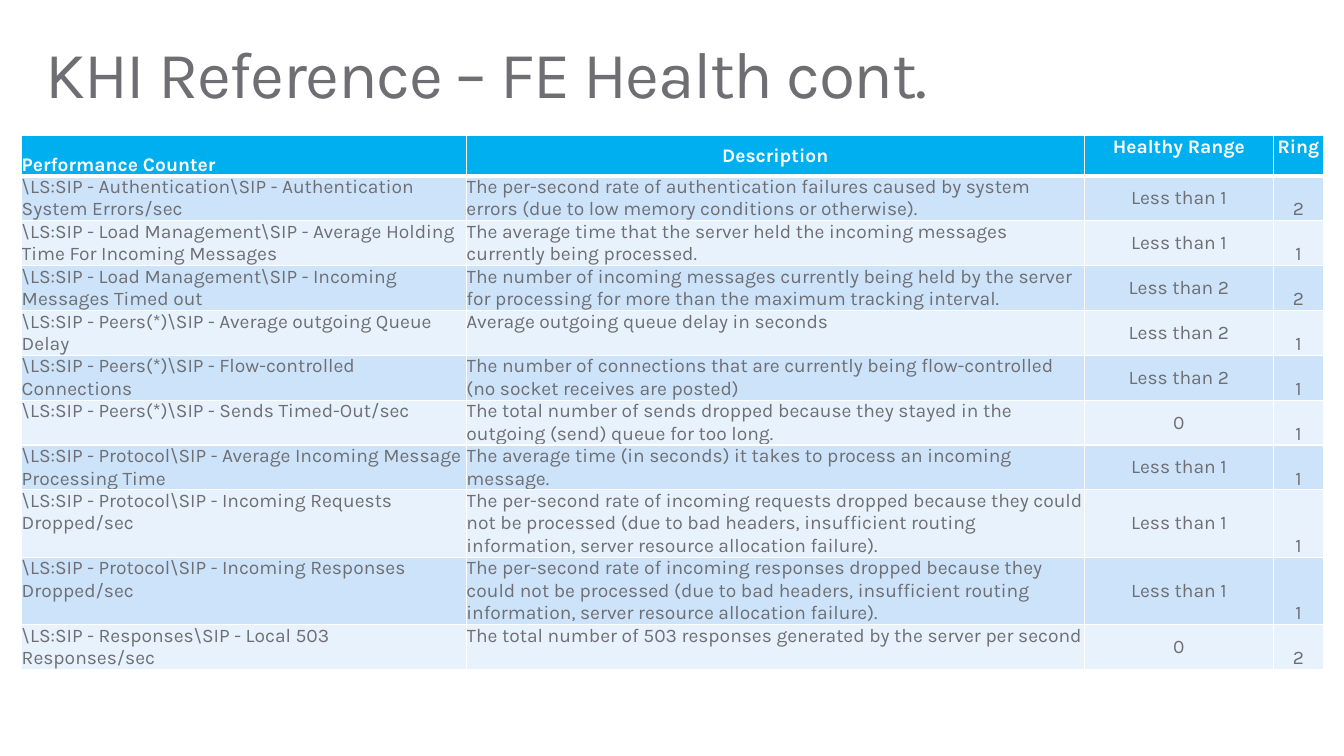
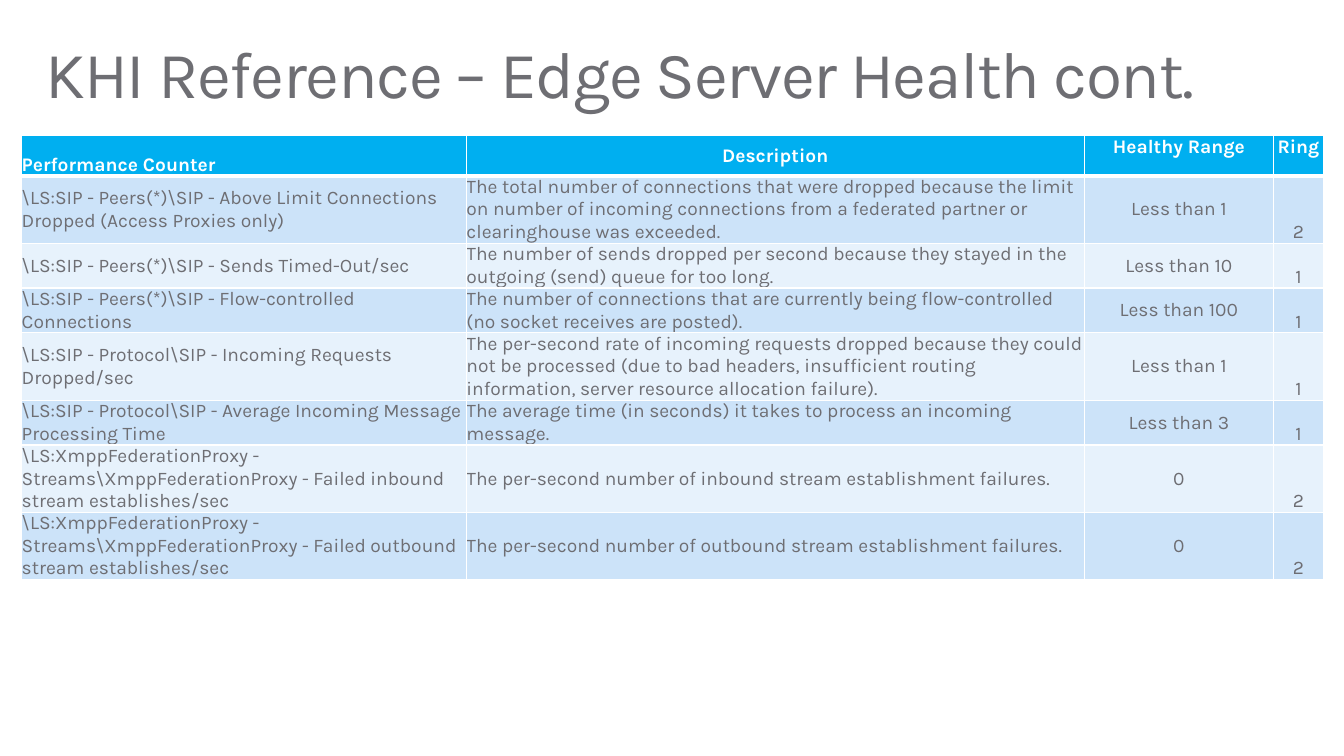
import lxml.etree
import pptx
import pptx.dml.color
import pptx.enum.text
import pptx.oxml.ns
import pptx.util

Inches = pptx.util.Inches
Pt = pptx.util.Pt
ANCHOR = pptx.enum.text.MSO_ANCHOR
ALIGN = pptx.enum.text.PP_ALIGN
qn = pptx.oxml.ns.qn

FONT = "Karla"
COLORS = {
    "text": "6E6E73",
    "white": "FFFFFF",
    "header": "00AFF0",
    "odd": "CCE3F9",
    "even": "E7F2FC",
}
TITLE_BOX = (0.3, 0.32, 13, 1)
TABLE_BOX = (0.22, 1.37)
COL_WIDTHS = (4.5, 6.25, 1.92, 0.5)
ROW_HEIGHT = 0.41
HEADINGS = ("Performance Counter", "Description", "Healthy Range", "Ring")
HEADING_ANCHORS = (ANCHOR.BOTTOM, ANCHOR.MIDDLE, ANCHOR.TOP, ANCHOR.TOP)
HEADING_ALIGNS = (ALIGN.LEFT, ALIGN.CENTER, ALIGN.CENTER, ALIGN.CENTER)
BODY_ALIGNS = (ALIGN.LEFT, ALIGN.LEFT, ALIGN.CENTER, ALIGN.CENTER)

FE_COUNTERS = [
    (r"\LS:SIP - Authentication\SIP - Authentication System Errors/sec",
     "The per-second rate of authentication failures caused by system errors "
     "(due to low memory conditions or otherwise).", "Less than 1", "2"),
    (r"\LS:SIP - Load Management\SIP - Average Holding Time For Incoming Messages",
     "The average time that the server held the incoming messages currently "
     "being processed.", "Less than 1", "1"),
    (r"\LS:SIP - Load Management\SIP - Incoming Messages Timed out",
     "The number of incoming messages currently being held by the server for "
     "processing for more than the maximum tracking interval.", "Less than 2", "2"),
    (r"\LS:SIP - Peers(*)\SIP - Average outgoing Queue Delay",
     "Average outgoing queue delay in seconds", "Less than 2", "1"),
    (r"\LS:SIP - Peers(*)\SIP - Flow-controlled Connections",
     "The number of connections that are currently being flow-controlled "
     "(no socket receives are posted)", "Less than 2", "1"),
    (r"\LS:SIP - Peers(*)\SIP - Sends Timed-Out/sec",
     "The total number of sends dropped because they stayed in the outgoing "
     "(send) queue for too long.", "0", "1"),
    (r"\LS:SIP - Protocol\SIP - Average Incoming Message Processing Time",
     "The average time (in seconds) it takes to process an incoming message.",
     "Less than 1", "1"),
    (r"\LS:SIP - Protocol\SIP - Incoming Requests Dropped/sec",
     "The per-second rate of incoming requests dropped because they could not "
     "be processed (due to bad headers, insufficient routing information, "
     "server resource allocation failure).", "Less than 1", "1"),
    (r"\LS:SIP - Protocol\SIP - Incoming Responses Dropped/sec",
     "The per-second rate of incoming responses dropped because they could not "
     "be processed (due to bad headers, insufficient routing information, "
     "server resource allocation failure).", "Less than 1", "1"),
    (r"\LS:SIP - Responses\SIP - Local 503 Responses/sec",
     "The total number of 503 responses generated by the server per second",
     "0", "2"),
]
EDGE_COUNTERS = [
    (r"\LS:SIP - Peers(*)\SIP - Above Limit Connections Dropped (Access Proxies only)",
     "The total number of connections that were dropped because the limit on "
     "number of incoming connections from a federated partner or clearinghouse "
     "was exceeded.", "Less than 1", "2"),
    (r"\LS:SIP - Peers(*)\SIP - Sends Timed-Out/sec",
     "The number of sends dropped per second because they stayed in the "
     "outgoing (send) queue for too long.", "Less than 10", "1"),
    (r"\LS:SIP - Peers(*)\SIP - Flow-controlled Connections",
     "The number of connections that are currently being flow-controlled "
     "(no socket receives are posted).", "Less than 100", "1"),
    (r"\LS:SIP - Protocol\SIP - Incoming Requests Dropped/sec",
     "The per-second rate of incoming requests dropped because they could not "
     "be processed (due to bad headers, insufficient routing information, "
     "server resource allocation failure).", "Less than 1", "1"),
    (r"\LS:SIP - Protocol\SIP - Average Incoming Message Processing Time",
     "The average time (in seconds) it takes to process an incoming message.",
     "Less than 3", "1"),
    (r"\LS:XmppFederationProxy - Streams\XmppFederationProxy - Failed inbound "
     "stream establishes/sec",
     "The per-second number of inbound stream establishment failures.", "0", "2"),
    (r"\LS:XmppFederationProxy - Streams\XmppFederationProxy - Failed outbound "
     "stream establishes/sec",
     "The per-second number of outbound stream establishment failures.", "0", "2"),
]


def rgb(name):
    return pptx.dml.color.RGBColor.from_string(COLORS[name])


def set_attrs(obj, **values):
    for name, value in values.items():
        setattr(obj, name, value)


def set_font(font, size, color, bold=False):
    set_attrs(font, name=FONT, size=Pt(size), bold=bold)
    font.color.rgb = rgb(color)


def set_borders(cell, top, bottom):
    """Draw white cell borders; top and bottom are widths in points."""
    tc_pr = cell._tc.get_or_add_tcPr()
    sides = (("a:lnL", 1), ("a:lnR", 1), ("a:lnT", top), ("a:lnB", bottom))
    for i, (tag, width) in enumerate(sides):
        ln = lxml.etree.Element(qn(tag), w=str(Pt(width)))
        fill = lxml.etree.SubElement(ln, qn("a:solidFill"))
        lxml.etree.SubElement(fill, qn("a:srgbClr"), val=COLORS["white"])
        tc_pr.insert(i, ln)


def add_title(s, text, box):
    title = s.shapes.title
    left, top, width, height = map(Inches, box)
    set_attrs(title, left=left, top=top, width=width, height=height)
    tf = title.text_frame
    set_attrs(tf, word_wrap=True, vertical_anchor=ANCHOR.TOP,
              auto_size=pptx.enum.text.MSO_AUTO_SIZE.NONE,
              margin_left=Inches(0.16), margin_right=Inches(0.16),
              margin_top=Inches(0.1), margin_bottom=Inches(0.1))
    p = tf.paragraphs[0]
    set_attrs(p, alignment=ALIGN.LEFT, line_spacing=0.9)
    r = p.add_run()
    r.text = text
    set_font(r.font, 48, "text")
    r.font._element.set("spc", "-100")


def fill_cell(cell, text, fill, color, bold, anchor, align):
    set_attrs(cell, margin_left=0, margin_right=0, margin_top=0,
              margin_bottom=0, vertical_anchor=anchor)
    cell.fill.solid()
    cell.fill.fore_color.rgb = rgb(fill)
    p = cell.text_frame.paragraphs[0]
    p.alignment = align
    r = p.add_run()
    r.text = text
    set_font(r.font, 14, color, bold)


def add_counter_table(s, counters, box, text_anchor):
    rows = [HEADINGS, *counters]
    left, top = map(Inches, box)
    table = s.shapes.add_table(
        len(rows), len(COL_WIDTHS), left, top,
        Inches(sum(COL_WIDTHS)), Inches(ROW_HEIGHT * len(rows))).table
    for column, width in zip(table.columns, COL_WIDTHS):
        column.width = Inches(width)
    body_anchors = (text_anchor, text_anchor, ANCHOR.MIDDLE, ANCHOR.BOTTOM)
    for i, row in enumerate(rows):
        table.rows[i].height = Inches(ROW_HEIGHT)
        if i == 0:
            style = ("header", "white", True)
            anchors, aligns = HEADING_ANCHORS, HEADING_ALIGNS
        else:
            style = ("odd" if i % 2 else "even", "text", False)
            anchors, aligns = body_anchors, BODY_ALIGNS
        for j, text in enumerate(row):
            cell = table.cell(i, j)
            fill_cell(cell, text, *style, anchors[j], aligns[j])
            set_borders(cell, top=3 if i == 1 else 1, bottom=3 if i == 0 else 1)


def add_reference_slide(prs, title, counters, text_anchor):
    s = prs.slides.add_slide(prs.slide_layouts[5])
    add_title(s, title, TITLE_BOX)
    add_counter_table(s, counters, TABLE_BOX, text_anchor)


def main():
    prs = pptx.Presentation()
    set_attrs(prs, slide_width=Inches(13.6), slide_height=Inches(7.65))
    add_reference_slide(prs, "KHI Reference – FE Health cont.",
                        FE_COUNTERS, ANCHOR.TOP)
    add_reference_slide(prs, "KHI Reference – Edge Server Health cont.",
                        EDGE_COUNTERS, ANCHOR.MIDDLE)
    prs.save("out.pptx")


if __name__ == "__main__":
    main()
